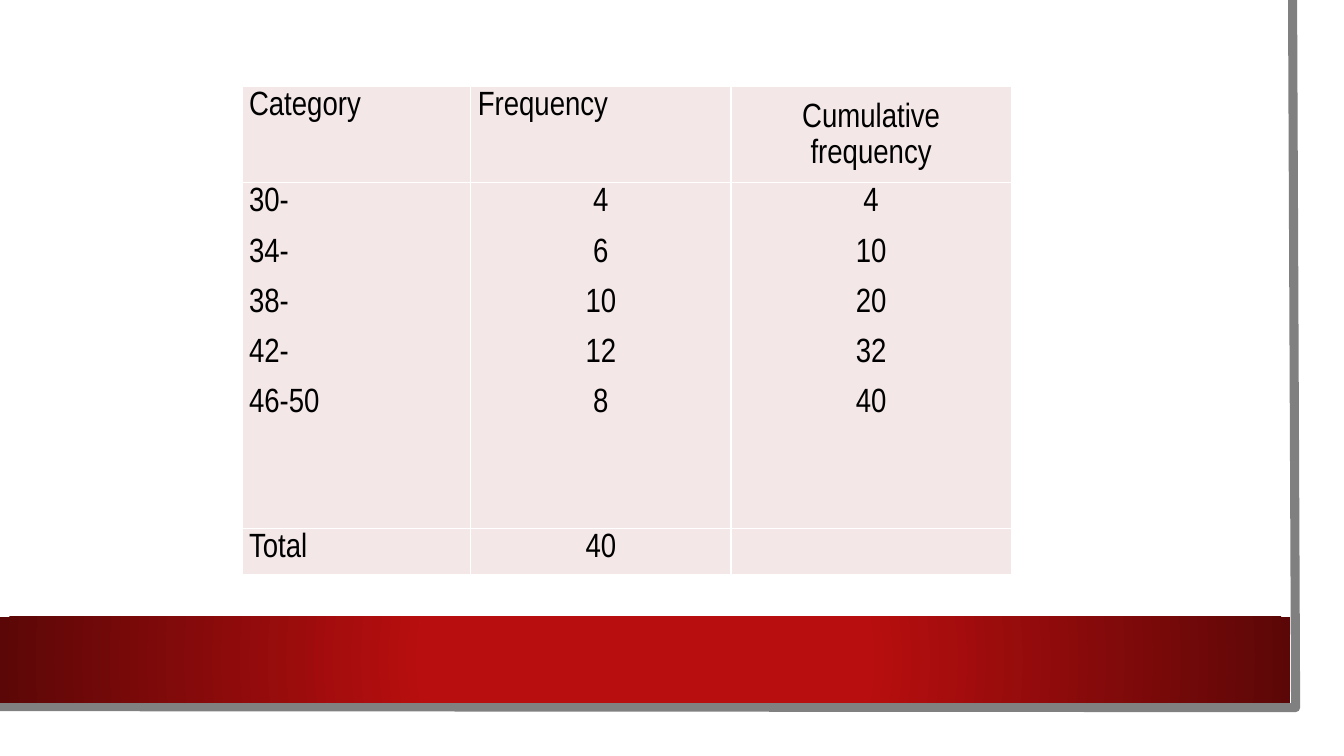
from dataclasses import dataclass

from lxml.etree import SubElement
from pptx import Presentation
from pptx.dml.color import RGBColor
from pptx.enum.shapes import MSO_SHAPE
from pptx.enum.text import MSO_ANCHOR, PP_ALIGN
from pptx.oxml import parse_xml
from pptx.oxml.ns import nsdecls, qn
from pptx.util import Inches, Pt


@dataclass(frozen=True)
class Theme:
    white: str = "FFFFFF"
    frame: str = "808080"
    band_centre: str = "B80E0F"
    band_edge: str = "5C0707"
    cell: str = "F3E7E7"
    text: str = "000000"
    font: str = "Arial Narrow"
    text_size: int = 24
    frame_width: float = 6.5
    border_width: int = 1


THEME = Theme()
COLUMN_WIDTHS = (2.27, 2.58, 2.78)
ROW_HEIGHTS = (0.95, 3.43, 0.46)
TABLE_ROWS = (
    (["Category"], ["Frequency"], ["Cumulative", "frequency"]),
    (
        ["30-", "34-", "38-", "42-", "46-50"],
        ["4", "6", "10", "12", "8"],
        ["4", "10", "20", "32", "40"],
    ),
    (["Total"], ["40"], []),
)


def color(value):
    return RGBColor.from_string(value)


def set_attributes(target, values):
    for name, value in values.items():
        setattr(target, name, value)


def add_panel(slide, left, top, width, height, fill):
    shape = slide.shapes.add_shape(
        MSO_SHAPE.RECTANGLE, Inches(left), Inches(top), Inches(width), Inches(height)
    )
    shape.shadow.inherit = False
    shape.fill.solid()
    shape.fill.fore_color.rgb = color(fill)
    shape.line.fill.background()
    return shape


def set_radial_gradient(shape, centre, edge):
    gradient = parse_xml(
        f'<a:gradFill {nsdecls("a")} rotWithShape="1"><a:gsLst>'
        f'<a:gs pos="34000"><a:srgbClr val="{centre}"/></a:gs>'
        f'<a:gs pos="100000"><a:srgbClr val="{edge}"/></a:gs></a:gsLst>'
        '<a:path path="circle"><a:fillToRect l="50000" t="50000" r="50000" b="50000"/>'
        "</a:path></a:gradFill>"
    )
    properties = shape.element.spPr
    properties.replace(properties.find(qn("a:solidFill")), gradient)


def add_outline(slide, points):
    start, *others = [(Inches(x), Inches(y)) for x, y in points]
    builder = slide.shapes.build_freeform(*start)
    builder.add_line_segments(others, close=False)
    shape = builder.convert_to_shape()
    shape.shadow.inherit = False
    shape.fill.background()
    shape.line.color.rgb = color(THEME.frame)
    shape.line.width = Pt(THEME.frame_width)


def set_borders(cell):
    properties = cell._tc.get_or_add_tcPr()
    for position, side in enumerate(("lnL", "lnR", "lnT", "lnB")):
        line = parse_xml(f'<a:{side} {nsdecls("a")} w="{Pt(THEME.border_width)}"/>')
        fill = SubElement(line, qn("a:solidFill"))
        SubElement(fill, qn("a:srgbClr"), val=THEME.white)
        properties.insert(position, line)


def fill_cell(cell, lines, centred, header_block):
    set_attributes(cell, {
        "margin_left": Inches(0.07),
        "margin_right": Inches(0.07),
        "margin_top": 0,
        "margin_bottom": 0,
        "vertical_anchor": MSO_ANCHOR.MIDDLE if header_block else MSO_ANCHOR.TOP,
    })
    cell.fill.solid()
    cell.fill.fore_color.rgb = color(THEME.cell)
    set_borders(cell)
    frame = cell.text_frame
    frame.text = "\n".join(lines)
    for paragraph in frame.paragraphs:
        set_attributes(paragraph, {
            "alignment": PP_ALIGN.CENTER if centred else PP_ALIGN.LEFT,
            "line_spacing": 1.15,
            "space_after": Pt(0 if header_block else 10),
        })
        set_attributes(paragraph.font, {"name": THEME.font, "size": Pt(THEME.text_size)})
        paragraph.font.color.rgb = color(THEME.text)


def add_frequency_table(slide, left, top):
    table = slide.shapes.add_table(
        len(ROW_HEIGHTS), len(COLUMN_WIDTHS), Inches(left), Inches(top),
        Inches(sum(COLUMN_WIDTHS)), Inches(sum(ROW_HEIGHTS)),
    ).table
    set_attributes(table, {"first_row": False, "horz_banding": False})
    for column, width in zip(table.columns, COLUMN_WIDTHS):
        column.width = Inches(width)
    for row, height in zip(table.rows, ROW_HEIGHTS):
        row.height = Inches(height)
    for row_index, row in enumerate(TABLE_ROWS):
        for column_index, lines in enumerate(row):
            header_block = row_index == 0 and column_index == 2
            centred = header_block or (row_index > 0 and column_index > 0)
            fill_cell(table.cell(row_index, column_index), lines, centred, header_block)


def main():
    presentation = Presentation()
    set_attributes(presentation, {
        "slide_width": Inches(13.33), "slide_height": Inches(7.5),
    })
    slide = presentation.slides.add_slide(presentation.slide_layouts[6])

    # Paper, grey frame and red band
    add_panel(slide, 0, 0, 13.1, 7.27, THEME.white)
    add_outline(slide, [(12.82, 0), (12.85, 7.02), (-0.03, 7.01)])
    band = add_panel(slide, 0, 6.12, 12.8, 0.85, THEME.band_centre)
    set_radial_gradient(band, THEME.band_centre, THEME.band_edge)

    # Frequency table
    add_frequency_table(slide, 2.4, 0.86)

    presentation.save("out.pptx")


if __name__ == "__main__":
    main()
